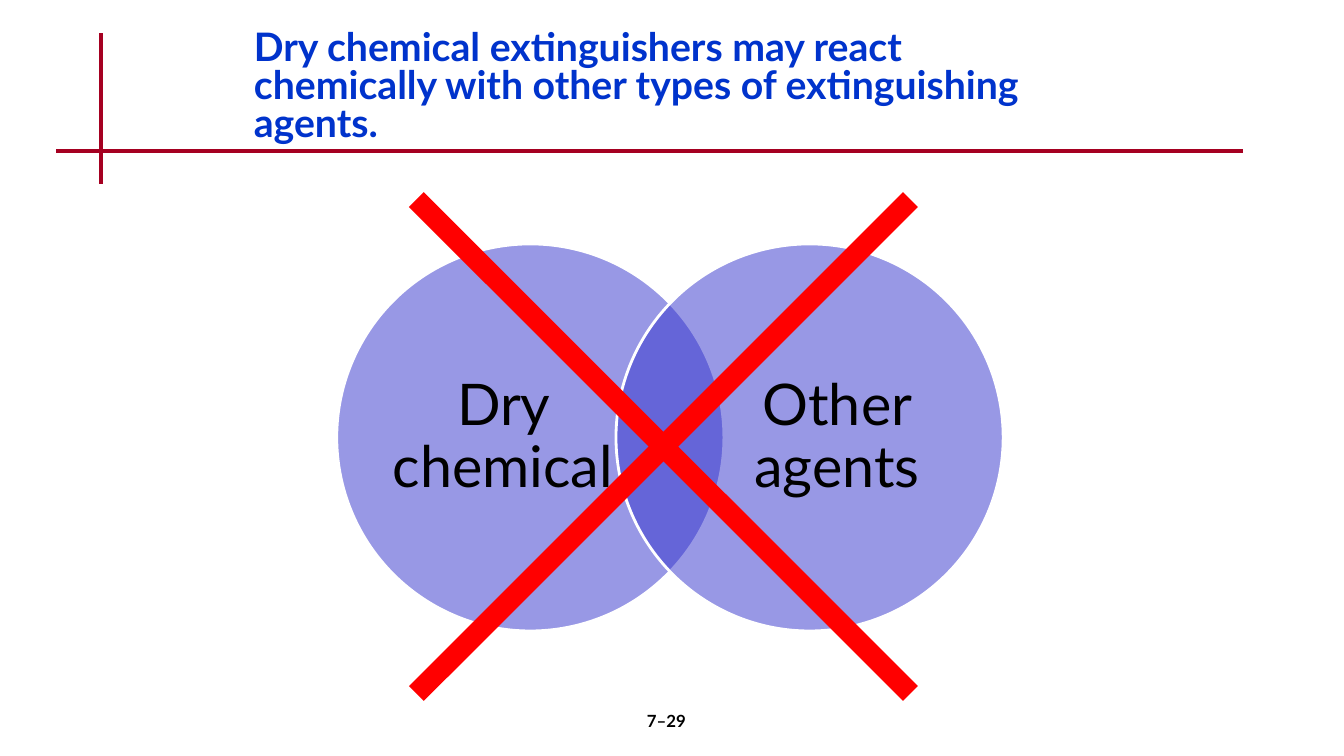
from collections import namedtuple

from lxml.etree import SubElement
from pptx import Presentation
from pptx.dml.color import RGBColor
from pptx.enum.shapes import MSO_CONNECTOR, MSO_SHAPE
from pptx.enum.text import MSO_ANCHOR, PP_ALIGN
from pptx.oxml.ns import qn
from pptx.util import Inches, Pt

FONT = "Lato"
COLORS = {
    "rule": "A50021",
    "title": "0033CC",
    "text": "000000",
    "circle": "3333CC",
    "outline": "FFFFFF",
    "cross": "FF0000",
}
Box = namedtuple("Box", "left top width height")
SLIDE = Box(0, 0, 13.33, 7.5)


def color(name):
    return RGBColor.from_string(COLORS[name])


def add_line(shapes, start, end, color_name, width):
    points = [Inches(value) for value in (*start, *end)]
    line = shapes.add_connector(MSO_CONNECTOR.STRAIGHT, *points)
    line.line.color.rgb = color(color_name)
    line.line.width = Pt(width)
    SubElement(line._element.spPr, qn("a:effectLst"))


def add_text(shapes, box, text, size, color_name="text", bold=False,
             align=PP_ALIGN.CENTER, anchor=MSO_ANCHOR.TOP, spacing=1.0):
    frame = shapes.add_textbox(*map(Inches, box)).text_frame
    frame.word_wrap = True
    frame.vertical_anchor = anchor
    frame.text = text
    paragraph = frame.paragraphs[0]
    paragraph.alignment = align
    paragraph.line_spacing = spacing
    font = paragraph.runs[0].font
    font.name, font.size, font.bold = FONT, Pt(size), bold
    font.color.rgb = color(color_name)
    return frame


def add_header(page, box, title):
    """Crossed rules with the title above the horizontal one."""
    rule_x, rule_y = box.left + 0.44, box.top + 1.17
    bottom, right = box.top + box.height, box.left + box.width
    add_line(page.shapes, (rule_x, box.top), (rule_x, bottom), "rule", 3)
    add_line(page.shapes, (box.left, rule_y), (right, rule_y), "rule", 3)
    title_box = Box(box.left + 1.86, rule_y - 1.25, 8.5, 1.25)
    add_text(page.shapes, title_box, title, 28, "title", bold=True,
             align=PP_ALIGN.LEFT, anchor=MSO_ANCHOR.MIDDLE, spacing=0.8)


def add_circle(shapes, box):
    circle = shapes.add_shape(MSO_SHAPE.OVAL, *map(Inches, box))
    circle.shadow.inherit = False
    circle.fill.solid()
    circle.fill.fore_color.rgb = color("circle")
    fill_color = circle._element.spPr.find(qn("a:solidFill"))[0]
    SubElement(fill_color, qn("a:alpha"), val="50000")
    circle.line.color.rgb = color("outline")
    circle.line.width = Pt(2)


def add_venn(page, box, labels):
    """Two overlapping circles as tall as the box, with mirrored labels."""
    shapes = page.shapes.add_group_shape().shapes
    diameter = box.height
    label_width, label_height, label_inset = 2.22, 2.94, 0.54
    label_top = box.top + (diameter - label_height) / 2
    circle_lefts = (box.left, box.left + box.width - diameter)
    label_lefts = (box.left + label_inset,
                   box.left + box.width - label_inset - label_width)
    for circle_left, label_left, label in zip(circle_lefts, label_lefts, labels):
        add_circle(shapes, Box(circle_left, box.top, diameter, diameter))
        frame = add_text(shapes, Box(label_left, label_top, label_width, label_height),
                         label, 41, anchor=MSO_ANCHOR.MIDDLE, spacing=0.9)
        frame.margin_left = frame.margin_right = 0
        frame.margin_top = frame.margin_bottom = 0


def add_cross(page, box):
    shapes = page.shapes.add_group_shape().shapes
    right, bottom = box.left + box.width, box.top + box.height
    add_line(shapes, (box.left, box.top), (right, bottom), "cross", 15)
    add_line(shapes, (right, box.top), (box.left, bottom), "cross", 15)


def main():
    deck = Presentation()
    deck.slide_width, deck.slide_height = Inches(SLIDE.width), Inches(SLIDE.height)
    page = deck.slides.add_slide(deck.slide_layouts[6])
    add_header(page, Box(0.56, 0.33, 11.77, 1.5),
               "Dry chemical extinguishers may react chemically with "
               "other types of extinguishing agents.")
    add_text(page.shapes, Box(5.22, SLIDE.height - 0.5, 2.78, 0.5),
             "7–29", 12, bold=True)
    add_venn(page, Box(3.34, 2.42, 6.61, 3.84), ("Dry chemical", "Other agents"))
    add_cross(page, Box(4.13, 1.98, 4.9, 4.9))
    deck.save("out.pptx")


if __name__ == "__main__":
    main()
